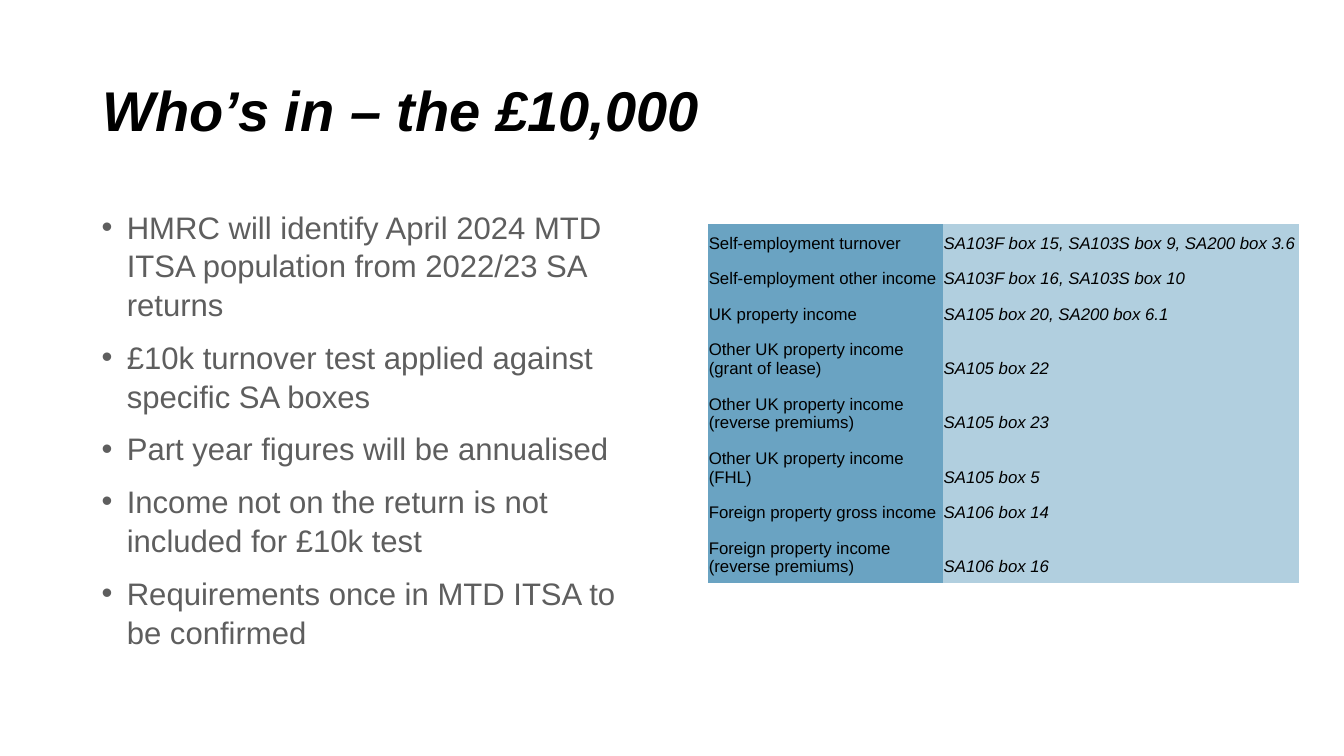
from dataclasses import dataclass

from lxml.etree import SubElement
from pptx import Presentation
from pptx.dml.color import RGBColor as RGB
from pptx.enum.text import MSO_ANCHOR as Anchor
from pptx.oxml.ns import qn
from pptx.util import Pt

PX = 9144
FONT = "Arial"
COLORS = {"ink": "000000", "body": "5E5E5E", "label": "6AA3C2", "boxes": "B1CFDF"}
NO_STYLE = "{2D5ABB26-0587-4C30-8999-92F81FD0307C}"
COLUMNS = (233, 353)
SHORT_ROW, TALL_ROW = 35, 54


@dataclass
class Income:
    label: str
    boxes: str
    height: int = SHORT_ROW


BULLETS = [
    "HMRC will identify April 2024 MTD ITSA population from 2022/23 SA returns",
    "£10k turnover test applied against specific SA boxes",
    "Part year figures will be annualised",
    "Income not on the return is not included for £10k test",
    "Requirements once in MTD ITSA to be confirmed",
]

INCOMES = [
    Income("Self-employment turnover", "SA103F box 15, SA103S box 9, SA200 box 3.6"),
    Income("Self-employment other income", "SA103F box 16, SA103S box 10"),
    Income("UK property income", "SA105 box 20, SA200 box 6.1"),
    Income("Other UK property income (grant of lease)", "SA105 box 22", TALL_ROW),
    Income("Other UK property income (reverse premiums)", "SA105 box 23", TALL_ROW),
    Income("Other UK property income (FHL)", "SA105 box 5", TALL_ROW),
    Income("Foreign property gross income", "SA106 box 14"),
    Income("Foreign property income (reverse premiums)", "SA106 box 16", TALL_ROW),
]


def px(*lengths: int) -> list[int]:
    return [length * PX for length in lengths]


def add_run(p, text: str, size: float, color: str, bold: bool = False, italic: bool = False) -> None:
    r = p.add_run()
    r.text = text
    r.font.name = FONT
    r.font.size = Pt(size)
    r.font.bold = bold
    r.font.italic = italic
    r.font.color.rgb = RGB.from_string(COLORS[color])


def add_text_frame(s, *box: int):
    tf = s.shapes.add_textbox(*px(*box)).text_frame
    tf.word_wrap = True
    return tf


def add_title(s) -> None:
    tf = add_text_frame(s, 92, 40, 1196, 145)
    tf.vertical_anchor = Anchor.MIDDLE
    p = tf.paragraphs[0]
    p.line_spacing = 0.9
    add_run(p, "Who’s in – the £10,000", 40, "ink", bold=True, italic=True)


def add_bullets(s) -> None:
    tf = add_text_frame(s, 91, 200, 570, 476)
    for i, text in enumerate(BULLETS):
        p = tf.add_paragraph() if i else tf.paragraphs[0]
        p.line_spacing = 1.04
        p.space_before = Pt(10)
        pPr = p._p.get_or_add_pPr()
        pPr.set("marL", str(25 * PX))
        pPr.set("indent", str(-25 * PX))
        SubElement(pPr, qn("a:buFont"), typeface=FONT)
        SubElement(pPr, qn("a:buChar"), char="•")
        add_run(p, text, 22.2, "body")


def fill_cell(cell, text: str, fill: str, italic: bool) -> None:
    cell.fill.solid()
    cell.fill.fore_color.rgb = RGB.from_string(COLORS[fill])
    cell.vertical_anchor = Anchor.BOTTOM
    cell.margin_left = cell.margin_right = 1 * PX
    cell.margin_top = cell.margin_bottom = 6 * PX
    add_run(cell.text_frame.paragraphs[0], text, 12, "ink", italic=italic)


def add_income_table(s) -> None:
    height = sum(income.height for income in INCOMES)
    box = px(702, 222, sum(COLUMNS), height)
    table = s.shapes.add_table(len(INCOMES), len(COLUMNS), *box).table
    table.first_row = table.horz_banding = False
    table._tbl.tblPr.find(qn("a:tableStyleId")).text = NO_STYLE
    for column, width in zip(table.columns, COLUMNS):
        column.width = width * PX
    for i, income in enumerate(INCOMES):
        table.rows[i].height = income.height * PX
        fill_cell(table.cell(i, 0), income.label, "label", italic=False)
        fill_cell(table.cell(i, 1), income.boxes, "boxes", italic=True)


def main() -> None:
    prs = Presentation()
    prs.slide_width, prs.slide_height = px(1333, 750)
    s = prs.slides.add_slide(prs.slide_layouts[6])
    add_title(s)
    add_bullets(s)
    add_income_table(s)
    prs.save("out.pptx")


if __name__ == "__main__":
    main()
